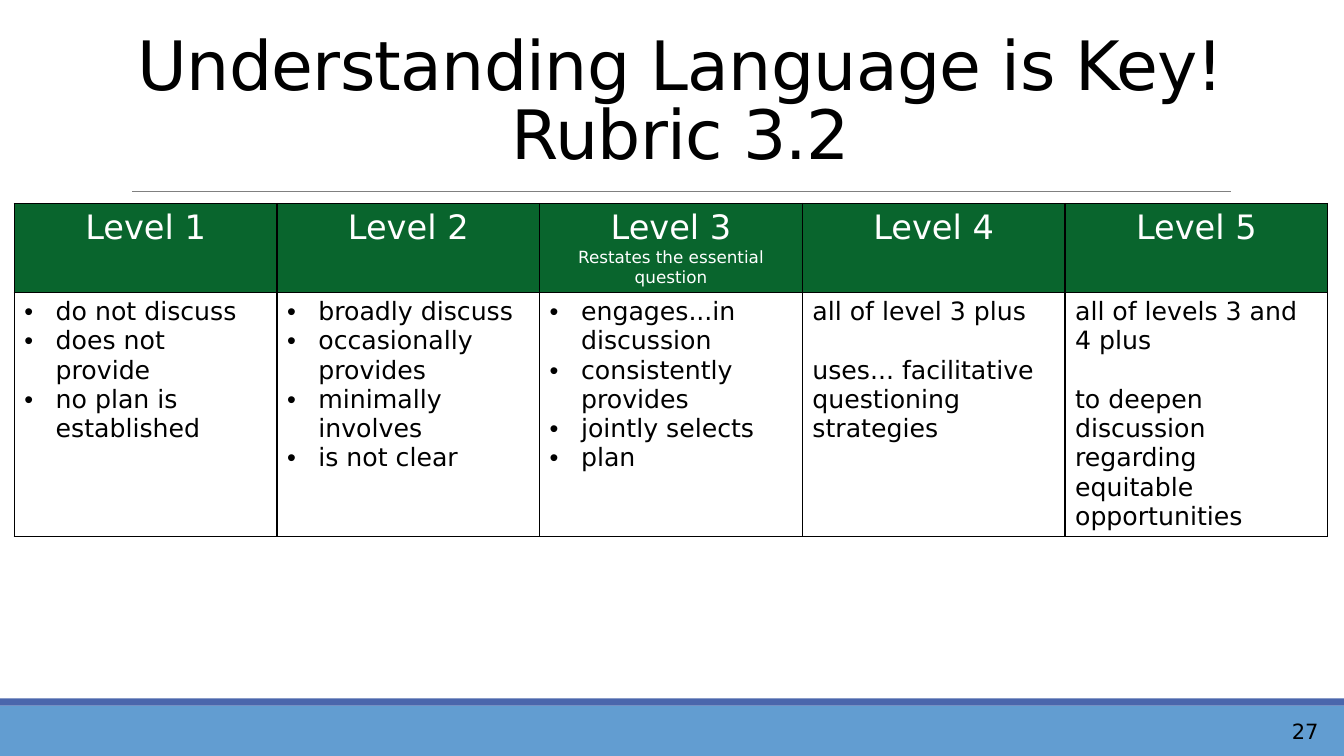
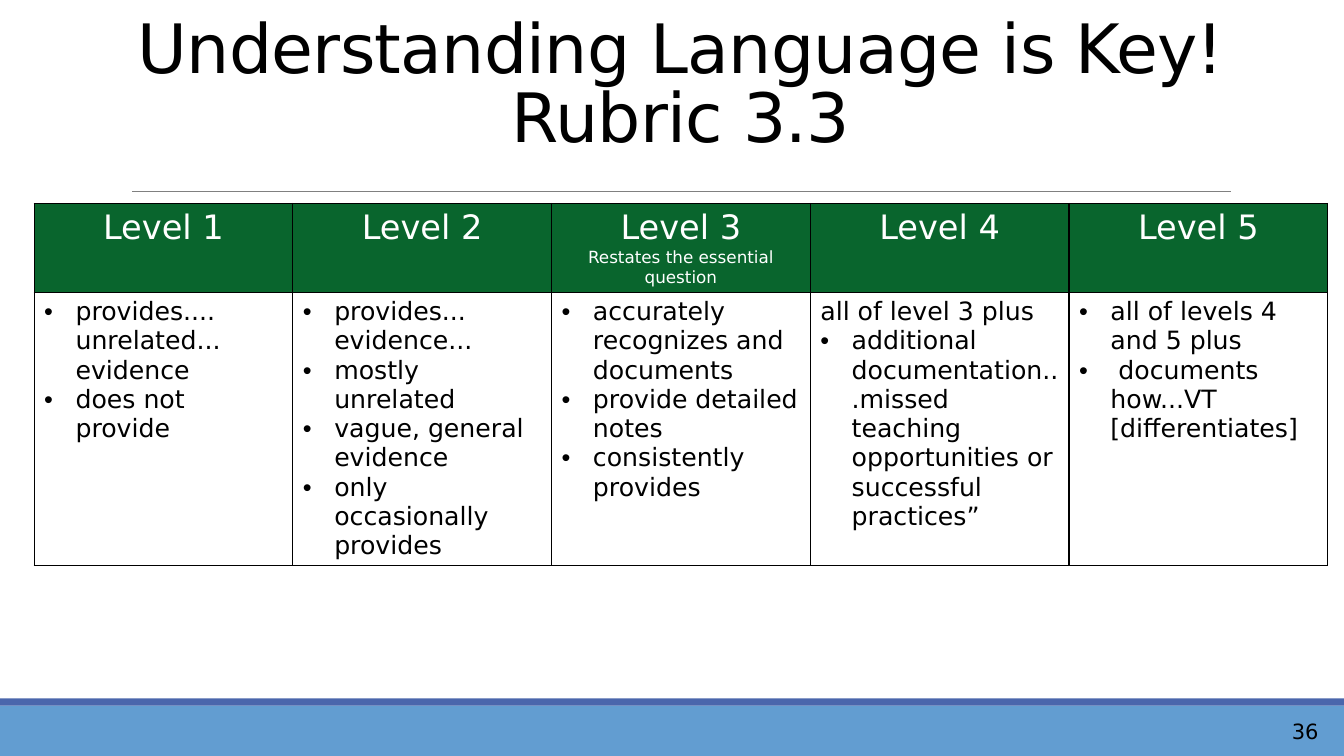
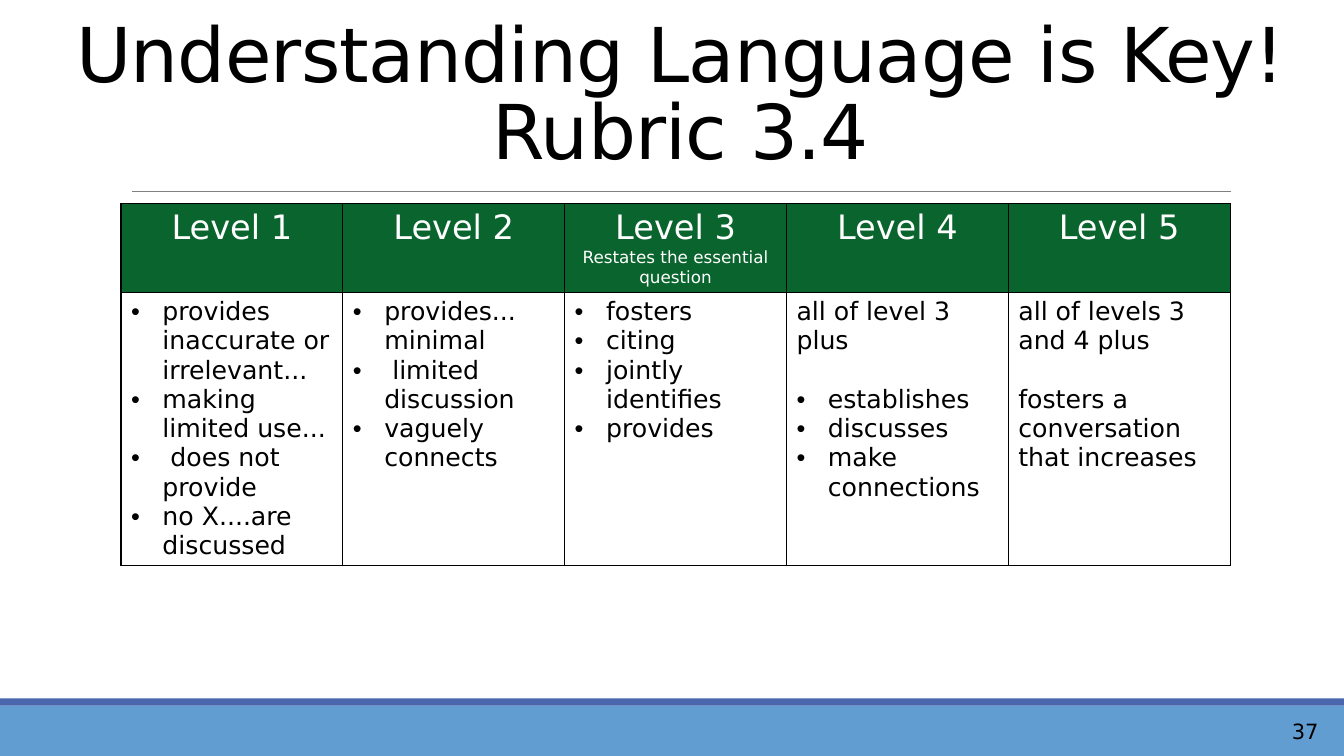
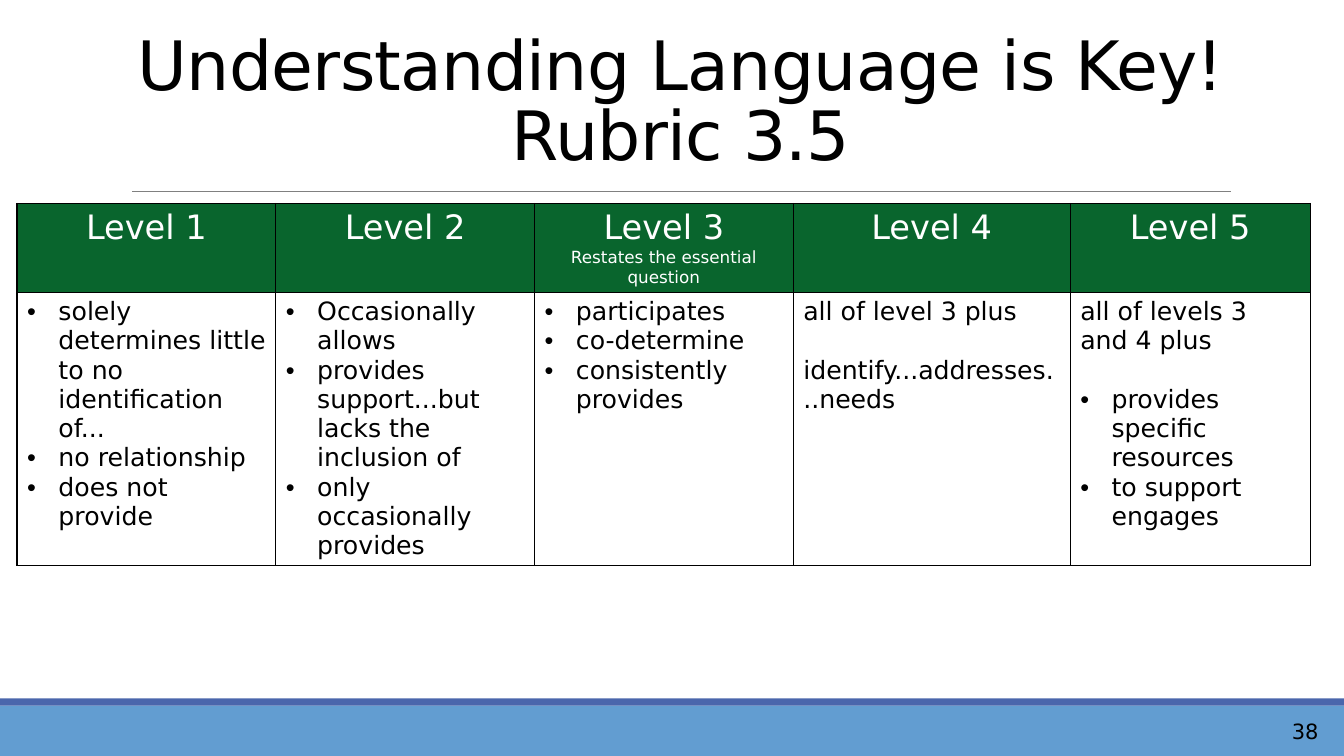
from dataclasses import dataclass

from lxml.etree import SubElement
from pptx import Presentation
from pptx.dml.color import RGBColor
from pptx.enum.shapes import MSO_CONNECTOR, MSO_SHAPE
from pptx.enum.text import MSO_ANCHOR, MSO_AUTO_SIZE, PP_ALIGN
from pptx.oxml import parse_xml
from pptx.oxml.ns import nsdecls, qn
from pptx.util import Cm, Pt

COLORS = {
    "text": "000000",
    "band": "629DD1",
    "stripe": "4A66AC",
    "rule": "808080",
    "header": "09652D",
    "header_text": "FFFFFF",
    "border": "000000",
}
FONT = "DejaVu Sans"
SLIDE_W, SLIDE_H = 33.87, 19.05
BAND_TOP, STRIPE_H = 17.78, 0.18
TITLE_LEFT, TITLE_W = 0.86, 32.59
TABLE_TOP, HEADER_H = 5.13, 2.23
INDENT = 0.79
LINE_GAP = 21
LEVELS = [f"Level {n}" for n in range(1, 6)]
HEADER_NOTES = {"Level 3": "Restates the essential question"}


@dataclass
class Criteria:
    """One level of a rubric: a lead line, then bullets, then closing text."""
    bullets: tuple = ()
    lead: str = ""
    closing: str = ""
    gap: bool = True


@dataclass
class Rubric:
    """One slide; lengths in cm, title size in points."""
    number: str
    page: str
    left: float
    widths: tuple
    body_h: float
    criteria: tuple
    title_top: float = 0.79
    title_h: float = 3.71
    title_size: float = 48.6


RUBRICS = [
    Rubric("3.2", "27", 0.36, (6.62,) * 5, 6.15, (
        Criteria(("do not discuss", "does not provide",
                  "no plan is established")),
        Criteria(("broadly discuss", "occasionally provides",
                  "minimally involves", "is not clear")),
        Criteria(("engages...in discussion", "consistently provides",
                  "jointly selects", "plan")),
        Criteria(lead="all of level 3 plus",
                 closing="uses... facilitative questioning strategies"),
        Criteria(lead="all of levels 3 and 4 plus",
                 closing="to deepen discussion regarding equitable "
                         "opportunities"),
    )),
    Rubric("3.3", "36", 0.86, (6.52,) * 5, 6.89, (
        Criteria(("provides.... unrelated... evidence",
                  "does not provide")),
        Criteria(("provides... evidence...", "mostly unrelated",
                  "vague, general evidence", "only occasionally provides")),
        Criteria(("accurately recognizes and documents",
                  "provide detailed notes", "consistently provides")),
        Criteria(("additional documentation...missed teaching "
                  "opportunities or successful practices”",),
                 lead="all of level 3 plus", gap=False),
        Criteria(("all of levels 4 and 5 plus",
                  " documents how...VT [differentiates]")),
    ), title_top=0.37),
    Rubric("3.4", "37", 3.05, (5.59,) * 5, 6.89, (
        Criteria(("provides inaccurate or irrelevant...",
                  "making limited use...", " does not provide",
                  "no X....are discussed")),
        Criteria(("provides... minimal", " limited discussion",
                  "vaguely connects")),
        Criteria(("fosters", "citing", "jointly identifies", "provides")),
        Criteria(("establishes", "discusses", "make connections"),
                 lead="all of level 3 plus"),
        Criteria(lead="all of levels 3 and 4 plus",
                 closing="fosters a conversation that increases"),
    ), title_top=0.2, title_h=4.34, title_size=54),
    Rubric("3.5", "38", 0.43, (6.52, 6.52, 6.52, 6.98, 6.05), 6.89, (
        Criteria(("solely determines little to no identification of...",
                  "no relationship", "does not provide")),
        Criteria(("Occasionally allows",
                  "provides support...but lacks the inclusion of",
                  "only occasionally provides")),
        Criteria(("participates", "co-determine", "consistently provides")),
        Criteria(lead="all of level 3 plus",
                 closing="identify...addresses...needs"),
        Criteria(("provides specific resources", "to support engages"),
                 lead="all of levels 3 and 4 plus"),
    ), title_top=0.81),
]


def rgb(name):
    return RGBColor.from_string(COLORS[name])


def style(p, size, color="text", align=PP_ALIGN.LEFT):
    p.alignment = align
    p.font.name = FONT
    p.font.size = Pt(size)
    p.font.bold = False
    p.font.color.rgb = rgb(color)


def add_band(slide, top, height, color):
    s = slide.shapes.add_shape(MSO_SHAPE.RECTANGLE, 0, Cm(top),
                               Cm(SLIDE_W), Cm(height))
    s.shadow.inherit = False
    s.fill.solid()
    s.fill.fore_color.rgb = rgb(color)
    s.line.fill.background()
    return s


def add_rule(slide, left, right, y):
    line = slide.shapes.add_connector(MSO_CONNECTOR.STRAIGHT, Cm(left), Cm(y),
                                      Cm(right), Cm(y))
    line.line.color.rgb = rgb("rule")
    line.line.width = Pt(0.5)
    SubElement(line.element.spPr, qn("a:effectLst"))
    return line


def decorate_layout(layout, slide):
    """Draw the shared bands and rule on slide, then move them to its layout."""
    parts = [
        add_band(slide, BAND_TOP, SLIDE_H - BAND_TOP, "band"),
        add_band(slide, BAND_TOP - STRIPE_H, STRIPE_H, "stripe"),
        add_rule(slide, 3.33, 31.01, 4.83),
    ]
    for s in parts:
        layout.shapes.element.append(s.element)


def fill_title(slide, rubric):
    s = slide.shapes.title
    s.left, s.top = Cm(TITLE_LEFT), Cm(rubric.title_top)
    s.width, s.height = Cm(TITLE_W), Cm(rubric.title_h)
    tf = s.text_frame
    tf.text = f"Understanding Language is Key!\vRubric {rubric.number}"
    tf.auto_size = MSO_AUTO_SIZE.NONE
    tf.vertical_anchor = MSO_ANCHOR.BOTTOM
    p = tf.paragraphs[0]
    style(p, rubric.title_size, align=PP_ALIGN.CENTER)
    p.line_spacing = 0.85
    for props in s.element.iter(qn("a:defRPr")):
        props.set("spc", "-50")


def add_page_number(slide, page):
    s = slide.shapes.add_textbox(Cm(31.65), Cm(17.86), Cm(1.83), Cm(1.12))
    tf = s.text_frame
    tf.word_wrap = True
    tf.vertical_anchor = MSO_ANCHOR.MIDDLE
    tf.text = page
    style(tf.paragraphs[0], 15, align=PP_ALIGN.RIGHT)


def add_bullet(p):
    props = p._p.get_or_add_pPr()
    props.set("marL", str(Cm(INDENT)))
    props.set("indent", str(-Cm(INDENT)))
    for tag, key, value in (("buFont", "typeface", "Arial"),
                            ("buChar", "char", "•")):
        bullet = parse_xml(f'<a:{tag} {nsdecls("a")} {key}="{value}"/>')
        props.insert_element_before(bullet, "a:tabLst", "a:defRPr")


def add_borders(cell):
    props = cell._tc.get_or_add_tcPr()
    for i, side in enumerate("LRTB"):
        props.insert(i, parse_xml(
            f'<a:ln{side} {nsdecls("a")} w="{Pt(1)}"><a:solidFill>'
            f'<a:srgbClr val="{COLORS["border"]}"/></a:solidFill></a:ln{side}>'))


def write_lines(tf, lines):
    """Put each line in its own paragraph and return the paragraphs."""
    tf.text = "\n".join(lines)
    return tf.paragraphs


def fill_header(cell, level):
    cell.fill.solid()
    cell.fill.fore_color.rgb = rgb("header")
    lines = [level]
    if level in HEADER_NOTES:
        lines.append(HEADER_NOTES[level])
    for p, size in zip(write_lines(cell.text_frame, lines), (24, 12)):
        style(p, size, "header_text", PP_ALIGN.CENTER)
    add_borders(cell)


def fill_criteria(cell, criteria):
    cell.fill.background()
    lines = [criteria.lead, *criteria.bullets, criteria.closing]
    paragraphs = write_lines(cell.text_frame, [t for t in lines if t])
    for p in paragraphs:
        style(p, 18)
        if p.text in criteria.bullets:
            add_bullet(p)
    if criteria.lead and criteria.gap:
        paragraphs[0].space_after = Pt(LINE_GAP)
    add_borders(cell)


def add_rubric_table(slide, rubric):
    frame = slide.shapes.add_table(
        2, len(LEVELS), Cm(rubric.left), Cm(TABLE_TOP),
        Cm(sum(rubric.widths)), Cm(HEADER_H + rubric.body_h))
    table = frame.table
    table.horz_banding = False
    table.rows[0].height = Cm(HEADER_H)
    table.rows[1].height = Cm(rubric.body_h)
    for i, (level, width) in enumerate(zip(LEVELS, rubric.widths)):
        table.columns[i].width = Cm(width)
        fill_header(table.cell(0, i), level)
        fill_criteria(table.cell(1, i), rubric.criteria[i])


def add_rubric_slide(prs, layout, rubric):
    slide = prs.slides.add_slide(layout)
    fill_title(slide, rubric)
    add_rubric_table(slide, rubric)
    add_page_number(slide, rubric.page)
    return slide


def main():
    prs = Presentation()
    prs.slide_width, prs.slide_height = Cm(SLIDE_W), Cm(SLIDE_H)
    layout = prs.slide_layouts.get_by_name("Title Only")
    slides = [add_rubric_slide(prs, layout, rubric) for rubric in RUBRICS]
    decorate_layout(layout, slides[0])
    prs.save("out.pptx")


if __name__ == "__main__":
    main()
